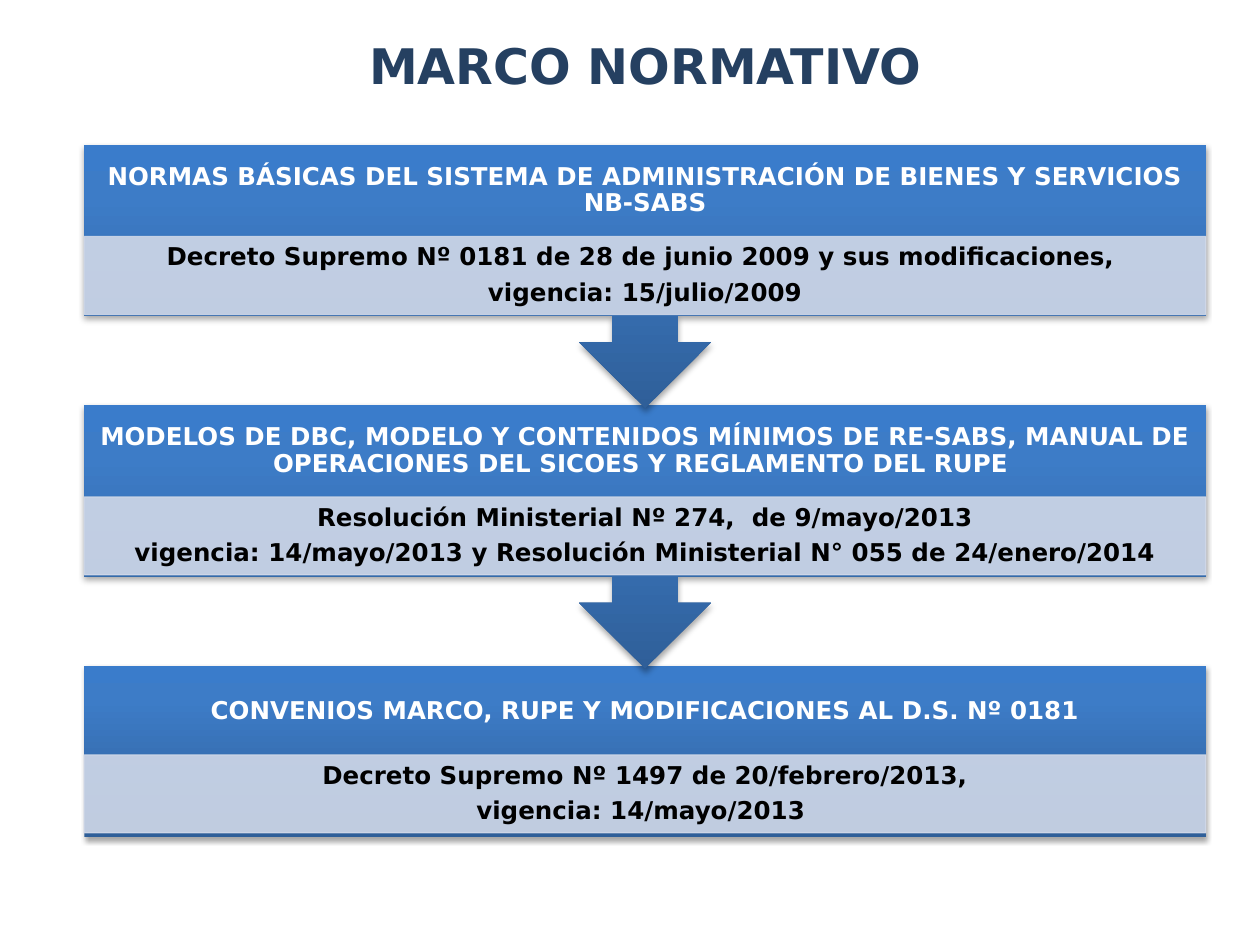
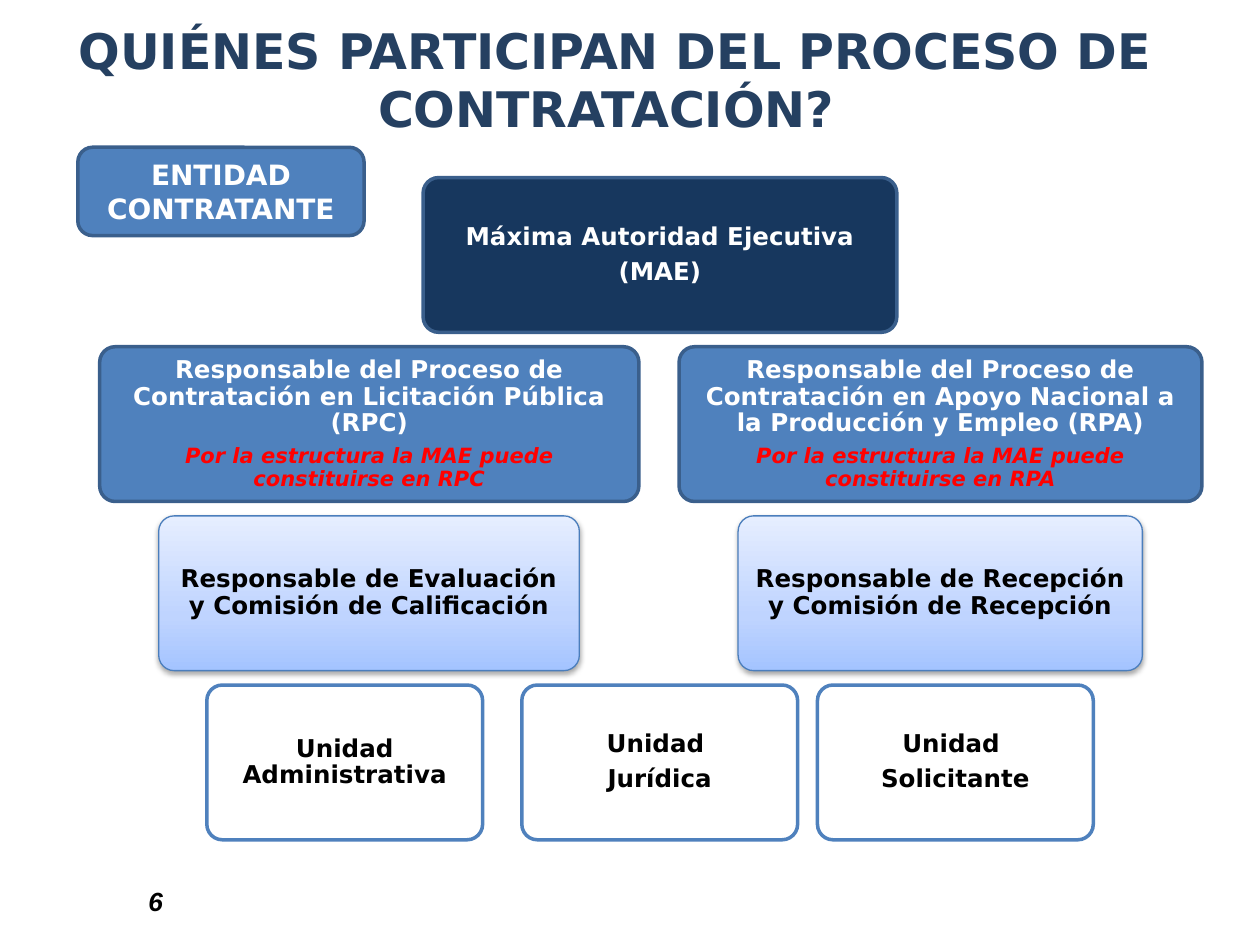
import dataclasses

import lxml.etree
import pptx
import pptx.dml.color
import pptx.enum.shapes
import pptx.enum.text
import pptx.oxml.ns
import pptx.util


@dataclasses.dataclass(frozen=True)
class Theme:
    font: str = "DejaVu Sans"
    number_font: str = "Arial"
    title_size: int = 28
    badge_size: int = 16
    number_size: int = 15
    text_size: int = 14
    note_size: int = 12
    title: str = "254061"
    navy: str = "17375E"
    blue: str = "4F81BD"
    border: str = "3A5F8C"
    soft_border: str = "4B7EBC"
    pale: str = "D0D8E8"
    white: str = "FFFFFF"
    black: str = "000000"
    red: str = "FF0000"
    band: tuple = ((0, "2F5F99"), (80, "3D7CC7"), (100, "3A7CCB"))
    sky: tuple = ((0, "A4C4FF"), (35, "BFD4FF"), (100, "E6EEFF"))


THEME = Theme()

NORMS_TITLE = ("MARCO NORMATIVO", (3.58, 0.58, 18.85, 1.45))
NORMS = [
    ("NORMAS BÁSICAS DEL SISTEMA DE ADMINISTRACIÓN DE BIENES Y SERVICIOS NB-SABS",
     ["Decreto Supremo Nº 0181 de 28 de junio 2009 y sus modificaciones, ",
      "vigencia: 15/julio/2009"]),
    ("MODELOS DE DBC, MODELO Y CONTENIDOS MÍNIMOS DE RE-SABS, MANUAL DE "
     "OPERACIONES DEL SICOES Y REGLAMENTO DEL RUPE ",
     ["Resolución Ministerial Nº 274,  de 9/mayo/2013",
      "vigencia: 14/mayo/2013 y Resolución Ministerial N° 055 de 24/enero/2014"]),
    ("CONVENIOS MARCO, RUPE Y MODIFICACIONES AL D.S. Nº 0181",
     ["Decreto Supremo Nº 1497 de 20/febrero/2013,",
      "vigencia: 14/mayo/2013 "]),
]

ROLES_TITLE = ("QUIÉNES PARTICIPAN DEL PROCESO DE CONTRATACIÓN? ", (0.58, 0, 23.62, 3.18))
ENTITY = ("ENTIDAD CONTRATANTE", (1.57, 2.97, 5.77, 1.78))
PAGE_NUMBER = ("6", (2.74, 17.35, 5.92, 1.27))
ROLE_ROWS = [
    ("authority", [(8.53, 9.55, ["Máxima Autoridad Ejecutiva", "(MAE)"], None)]),
    ("process", [
        (2.01, 10.87,
         ["Responsable del Proceso de Contratación en Licitación Pública (RPC)"],
         "Por la estructura la MAE puede constituirse en RPC"),
        (13.69, 10.54,
         ["Responsable del Proceso de Contratación en Apoyo Nacional a la Producción y Empleo (RPA)"],
         "Por la estructura la MAE puede constituirse en RPA"),
    ]),
    ("committee", [
        (3.2, 8.48, ["Responsable de Evaluación y Comisión de Calificación"], None),
        (14.88, 8.15, ["Responsable de Recepción y Comisión de Recepción"], None),
    ]),
    ("unit", [
        (4.17, 5.56, ["Unidad Administrativa"], None),
        (10.52, 5.56, ["Unidad ", "Jurídica"], None),
        (16.48, 5.56, ["Unidad ", "Solicitante"], None),
    ]),
]
ROLE_STYLES = {
    "authority": (THEME.navy, THEME.border, 2, THEME.white),
    "process": (THEME.blue, THEME.border, 2, THEME.white),
    "committee": (THEME.sky, THEME.soft_border, 0.75, THEME.black),
    "unit": (THEME.white, THEME.blue, 2, THEME.black),
}

NORM_LEFT, NORM_TOP, NORM_WIDTH, NORM_STEP = 1.7, 2.92, 22.61, 5.25
CALLOUT_HEIGHT, BOX_HEIGHT, DECREE_HEIGHT = 5.31, 3.45, 1.57
DECREE_OFFSET, LAST_DECREE_OFFSET = 1.85, 1.8
HEADER_INSETS = (0.28, 0.28, 0.28, 1.88)
DECREE_INSETS = (0.28, 0.05, 0.28, 0.05)
ROLE_TOP, ROLE_STEP, ROLE_HEIGHT = 3.58, 3.41, 3.12
ROLE_INSETS = (0.15,) * 4
PLAIN_INSETS = (0.25, 0.13, 0.25, 0.13)

SHAPES = pptx.enum.shapes.MSO_SHAPE
ANCHOR = pptx.enum.text.MSO_ANCHOR
ALIGN = pptx.enum.text.PP_ALIGN


def rgb(color):
    return pptx.dml.color.RGBColor.from_string(color)


def child(parent, tag, **attributes):
    return lxml.etree.SubElement(
        parent, pptx.oxml.ns.qn(tag), {key: str(value) for key, value in attributes.items()})


def paint(shape, fill, line=None, line_width=0.75):
    shape.shadow.inherit = False
    if isinstance(fill, tuple):
        shape.fill.gradient()
        shape.fill.gradient_angle = 90
        stops = shape._element.spPr.find(".//" + pptx.oxml.ns.qn("a:gsLst"))
        stops[:] = []
        for position, color in fill:
            child(child(stops, "a:gs", pos=position * 1000), "a:srgbClr", val=color)
    else:
        shape.fill.solid()
        shape.fill.fore_color.rgb = rgb(fill)
    if line:
        shape.line.color.rgb = rgb(line)
        shape.line.width = pptx.util.Pt(line_width)
    else:
        shape.line.fill.background()


def cast_shadow(shape):
    effects = shape._element.spPr.find(pptx.oxml.ns.qn("a:effectLst"))
    shadow = child(effects, "a:outerShdw", blurRad=pptx.util.Pt(3.1),
                   dist=pptx.util.Pt(1.8), dir=5400000, rotWithShape=0)
    child(child(shadow, "a:srgbClr", val=THEME.black), "a:alpha", val=35000)


def make_translucent(shape, percent):
    for color in shape._element.spPr.iter(pptx.oxml.ns.qn("a:srgbClr")):
        child(color, "a:alpha", val=percent * 1000)


def write(shape, lines, color, size=THEME.text_size, insets=PLAIN_INSETS,
          anchor=ANCHOR.MIDDLE, align=ALIGN.CENTER, compact=True, font=THEME.font):
    frame = shape.text_frame
    frame.text = "\n".join(lines)
    frame.word_wrap = True
    frame.auto_size = pptx.enum.text.MSO_AUTO_SIZE.NONE
    frame.vertical_anchor = anchor
    (frame.margin_left, frame.margin_top,
     frame.margin_right, frame.margin_bottom) = map(pptx.util.Cm, insets)
    for paragraph in frame.paragraphs:
        paragraph.alignment = align
        if compact:
            paragraph.line_spacing = 0.9
            paragraph.space_after = pptx.util.Pt(size * 0.35)
        for run in paragraph.runs:
            run.font.name = font
            run.font.size = pptx.util.Pt(size)
            run.font.bold = True
            run.font.color.rgb = rgb(color)
    return frame


def add_box(slide, kind, box):
    return slide.shapes.add_shape(kind, *map(pptx.util.Cm, box))


def add_titled_slide(deck, heading):
    slide = deck.slides.add_slide(deck.slide_layouts.get_by_name("Title Only"))
    text, box = heading
    title = slide.shapes.title
    title.left, title.top, title.width, title.height = map(pptx.util.Cm, box)
    write(title, [text], THEME.title, THEME.title_size, compact=False)
    return slide


def add_norm(slide, index, heading, decree):
    top = NORM_TOP + index * NORM_STEP
    last = index == len(NORMS) - 1
    kind = SHAPES.RECTANGLE if last else SHAPES.DOWN_ARROW_CALLOUT
    height = BOX_HEIGHT if last else CALLOUT_HEIGHT
    header = add_box(slide, kind, (NORM_LEFT, top, NORM_WIDTH, height))
    paint(header, THEME.band)
    cast_shadow(header)
    write(header, [heading], THEME.white, insets=HEADER_INSETS)

    decree_top = top + (LAST_DECREE_OFFSET if last else DECREE_OFFSET)
    strip = add_box(slide, SHAPES.RECTANGLE,
                    (NORM_LEFT, decree_top, NORM_WIDTH, DECREE_HEIGHT))
    paint(strip, THEME.pale, THEME.pale)
    make_translucent(strip, 90)
    write(strip, decree, THEME.black, insets=DECREE_INSETS)


def add_role(slide, top, level, left, width, lines, note):
    fill, line, line_width, color = ROLE_STYLES[level]
    role = add_box(slide, SHAPES.ROUNDED_RECTANGLE, (left, top, width, ROLE_HEIGHT))
    role.adjustments[0] = 0.1
    paint(role, fill, line, line_width)
    if level == "committee":
        cast_shadow(role)
    frame = write(role, lines + ([note] if note else []), color, insets=ROLE_INSETS)
    if note:
        remark = frame.paragraphs[-1]
        remark.space_after = pptx.util.Pt(THEME.note_size * 0.35)
        for run in remark.runs:
            run.font.size = pptx.util.Pt(THEME.note_size)
            run.font.italic = True
            run.font.color.rgb = rgb(THEME.red)


def build_norms(deck):
    slide = add_titled_slide(deck, NORMS_TITLE)
    for index, (heading, decree) in reversed(list(enumerate(NORMS))):
        add_norm(slide, index, heading, decree)


def build_roles(deck):
    slide = add_titled_slide(deck, ROLES_TITLE)
    for row, (level, roles) in enumerate(ROLE_ROWS):
        for role in roles:
            add_role(slide, ROLE_TOP + row * ROLE_STEP, level, *role)

    text, box = ENTITY
    entity = add_box(slide, SHAPES.ROUNDED_RECTANGLE, box)
    paint(entity, THEME.blue, THEME.border, 2)
    write(entity, [text], THEME.white, THEME.badge_size, compact=False)

    text, box = PAGE_NUMBER
    number = slide.shapes.add_textbox(*map(pptx.util.Cm, box))
    frame = write(number, [text], THEME.black, THEME.number_size, anchor=ANCHOR.BOTTOM,
                  align=ALIGN.LEFT, compact=False, font=THEME.number_font)
    frame.paragraphs[0].runs[0].font.italic = True


def main():
    deck = pptx.Presentation()
    deck.slide_width = pptx.util.Cm(25.4)
    deck.slide_height = pptx.util.Cm(19.05)
    build_norms(deck)
    build_roles(deck)
    deck.save("out.pptx")


if __name__ == "__main__":
    main()
